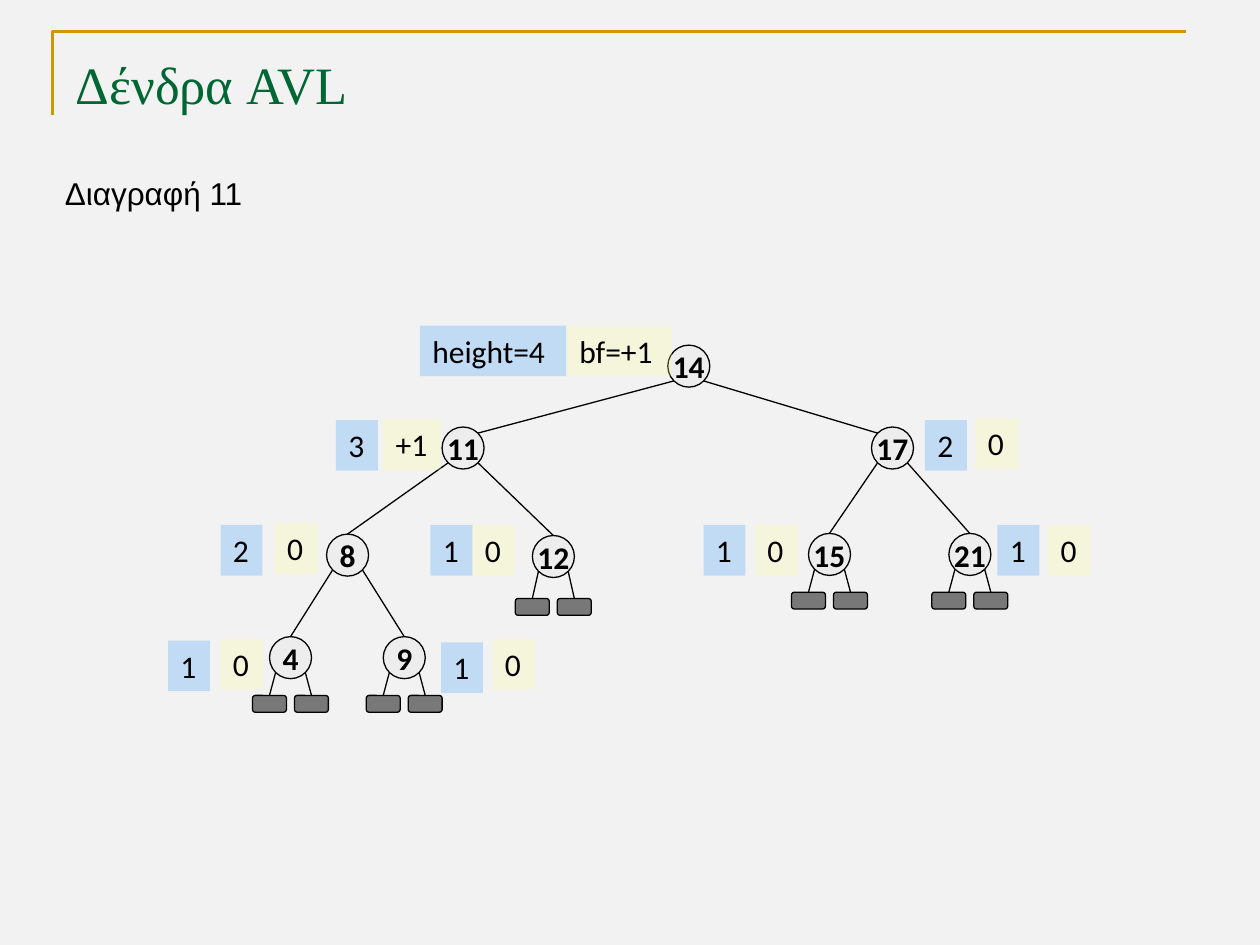
import pptx
import pptx.util
import pptx.dml.color
import pptx.enum.shapes
import pptx.enum.text
import pptx.oxml
import pptx.oxml.ns

Pt = pptx.util.Pt
Kind = pptx.enum.shapes.MSO_SHAPE
Fit = pptx.enum.text.MSO_AUTO_SIZE
Align = pptx.enum.text.PP_ALIGN
Anchor = pptx.enum.text.MSO_ANCHOR

COLORS = {"back": "F2F2F2", "rule": "CC9900", "title": "006633",
          "ink": "000000", "node": "EAEAEA", "high": "3399FF", "bal": "FFFF99"}
SIZE = 24    # node diameter
REACH = 8.5  # offset from a node's centre to where its branches start

# key: centre x, centre y
NODES = {14: (393.6, 209.2), 11: (264.6, 256), 17: (510, 256),
         8: (198.6, 317.2), 12: (316.2, 318), 15: (474, 316.8),
         21: (554.2, 316.8), 4: (166, 375.8), 9: (231, 375.8)}
KIDS = {14: (11, 17), 11: (8, 12), 17: (15, 21), 8: (4, 9)}
# key of a node with empty leaves: drop from its centre to their top
DROPS = {4: 21.6, 9: 21.6, 12: 24, 15: 21.6, 21: 21.6}
# text, left, top, width
BALS = [("bf=+1", 324, 186, 60), ("+1", 219, 239.5, 33), ("0", 557.5, 239, 24.5),
        ("0", 157, 299, 24.5), ("0", 270, 300, 24), ("0", 431.5, 300, 24.5),
        ("0", 599, 300, 24.5), ("0", 126, 365, 24.5), ("0", 281.5, 365, 24.5)]
HEIGHTS = [("height=4", 240, 186, 83.5), ("3", 192, 240, 24), ("2", 528.5, 240, 24),
           ("2", 126, 300, 24), ("1", 246, 300, 24), ("1", 402, 300, 24),
           ("1", 570, 300, 24), ("1", 96, 366, 24), ("1", 252, 367, 24)]


def tint(name):
    return pptx.dml.color.RGBColor.from_string(COLORS[name])


class Board:
    """Holds the style and the current slide."""

    def __init__(self, slide):
        self.slide = slide
        self.shapes = slide.shapes
        fill = slide.background.fill
        fill.solid()
        fill.fore_color.rgb = tint("back")

    def label(self, shape, text, size=18, font="Calibri", color="ink", bold=False):
        para = shape.text_frame.paragraphs[0]
        para.text = text
        para.alignment = Align.LEFT
        para.font.size, para.font.name = Pt(size), font
        para.font.bold = bold
        para.font.color.rgb = tint(color)
        return para

    def stroke(self, line, color="ink", width=0.75):
        line.color.rgb = tint(color)
        line.width = Pt(width)

    def shape(self, kind, left, top, width, height, color, alpha):
        """Add a preset shape with a see-through fill."""
        item = self.shapes.add_shape(kind, Pt(left), Pt(top), Pt(width), Pt(height))
        item.shadow.inherit = False
        item.fill.solid()
        item.fill.fore_color.rgb = tint(color)
        tone = item._element.spPr.find(".//" + pptx.oxml.ns.qn("a:srgbClr"))
        tone.append(pptx.oxml.parse_xml(
            f'<a:alpha {pptx.oxml.ns.nsdecls("a")} val="{alpha * 1000}"/>'))
        return item

    def title(self, text):
        item = self.shapes.title
        item.left, item.top, item.width, item.height = Pt(36), Pt(21.6), Pt(648), Pt(38)
        frame = item.text_frame
        frame.vertical_anchor = Anchor.TOP
        frame.margin_top = Pt(8)
        frame.auto_size = Fit.NONE
        self.label(item, text, 30, "Times New Roman", "title")

    def frame(self):
        """Draw the corner rule around the title."""
        pen = self.shapes.build_freeform(Pt(30), Pt(66))
        pen.add_line_segments([(Pt(30), Pt(18)), (Pt(678), Pt(18))], close=False)
        item = pen.convert_to_shape()
        item.shadow.inherit = False
        item.fill.background()
        self.stroke(item.line, "rule", 1.5)

    def note(self, text, left, top, width, height):
        item = self.shapes.add_textbox(Pt(left), Pt(top), Pt(width), Pt(height))
        item.text_frame.word_wrap = False
        item.text_frame.auto_size = Fit.SHAPE_TO_FIT_TEXT
        self.label(item, text, font="Arial")

    def line(self, *ends):
        item = self.shapes.add_connector(
            pptx.enum.shapes.MSO_CONNECTOR.STRAIGHT, *map(Pt, ends))
        self.stroke(item.line)
        item._element.spPr.append(pptx.oxml.parse_xml(
            f'<a:effectLst {pptx.oxml.ns.nsdecls("a")}/>'))

    def node(self, key, x, y):
        item = self.shape(Kind.OVAL, x - SIZE / 2, y - SIZE / 2, SIZE, SIZE, "node", 60)
        self.stroke(item.line)
        item.text_frame.word_wrap = False
        item.text_frame.vertical_anchor = Anchor.MIDDLE
        self.label(item, str(key), bold=True).alignment = Align.CENTER

    def branch(self, x, y, side, end):
        self.line(x + side * REACH, y + REACH, *end)

    def leaf(self, x, y, side, drop):
        mid, top = x + side * 12, y + drop
        item = self.shape(Kind.ROUNDED_RECTANGLE, mid - 9.7, top, 19.4, 9.6, "ink", 50)
        self.stroke(item.line)
        self.branch(x, y, side, (mid, top))

    def tag(self, text, left, top, width, color):
        item = self.shape(Kind.RECTANGLE, left, top, width, 29, color, 25)
        item.line.fill.background()
        item.text_frame.word_wrap = len(text) > 2
        item.text_frame.auto_size = Fit.SHAPE_TO_FIT_TEXT
        item.text_frame.vertical_anchor = Anchor.TOP
        self.label(item, text)


def main():
    deck = pptx.Presentation()
    deck.slide_width, deck.slide_height = Pt(720), Pt(540)
    board = Board(deck.slides.add_slide(deck.slide_layouts[5]))
    board.frame()
    board.title("Δένδρα AVL")
    for key, spot in NODES.items():
        board.node(key, *spot)
    for key, pair in KIDS.items():
        for side, kid in zip((-1, 1), pair):
            x, y = NODES[kid]
            # The root's wide branches meet the near shoulder of each child
            end = (x - side * REACH, y - REACH) if key == 14 else (x, y - SIZE / 2)
            board.branch(*NODES[key], side, end)
    for key, drop in DROPS.items():
        for side in (-1, 1):
            board.leaf(*NODES[key], side, drop)
    for color, tags in (("bal", BALS), ("high", HEIGHTS)):
        for tag in tags:
            board.tag(*tag, color)
    board.note("Διαγραφή 11", 30, 96, 118, 29)
    deck.save("out.pptx")


if __name__ == "__main__":
    main()
